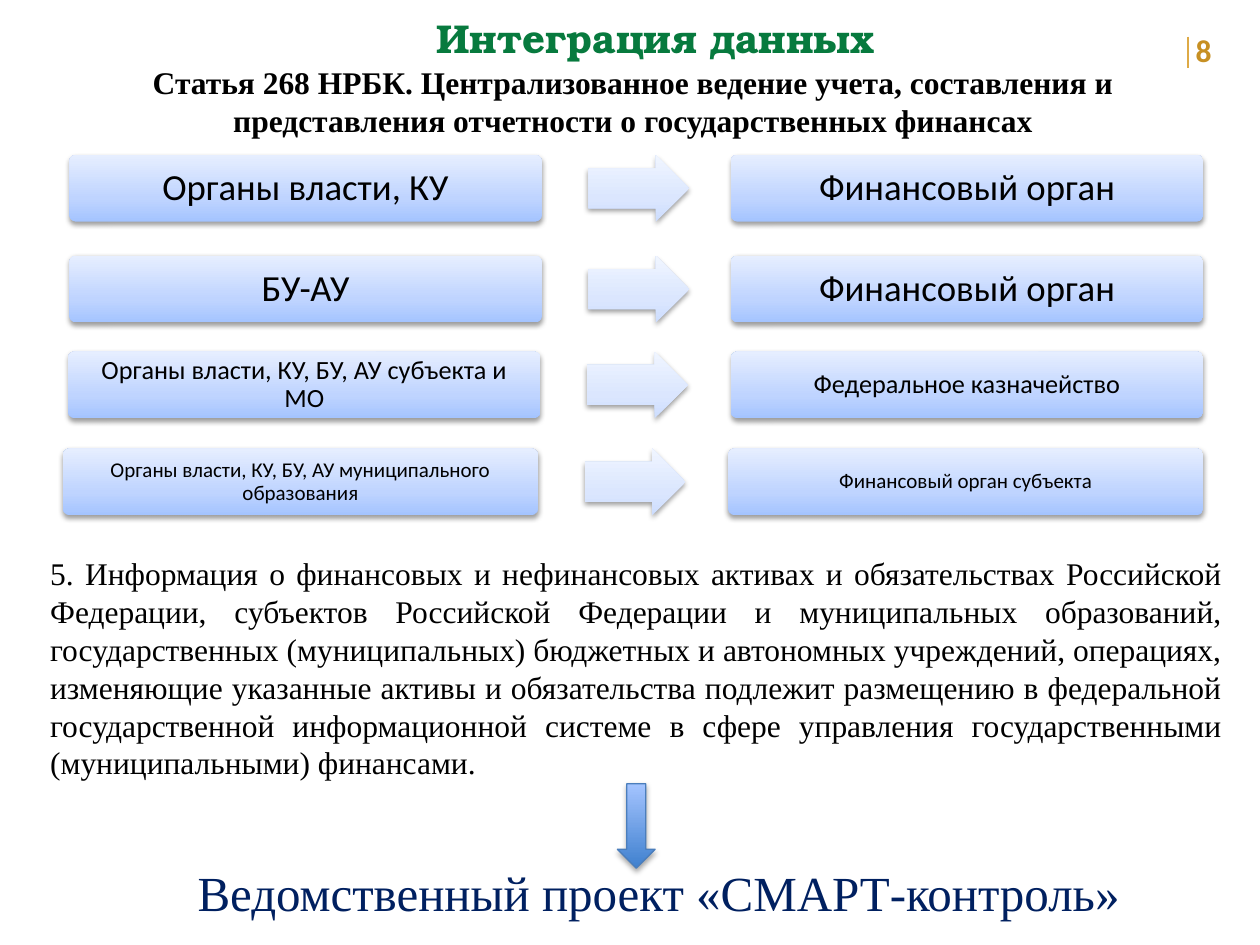
from lxml.etree import SubElement
from pptx import Presentation
from pptx.dml.color import RGBColor
from pptx.enum.shapes import MSO_CONNECTOR, MSO_SHAPE
from pptx.enum.text import MSO_ANCHOR, PP_ALIGN
from pptx.oxml.ns import qn
from pptx.util import Inches, Pt

COLORS = {
    "title": "077A3E", "number": "C79023", "number_line": "DEAA46",
    "text": "000000", "project": "002060", "arrow_line": "4B7EBC",
    "shadow": "000000",
}
GRADIENTS = {
    "box": [(0, "A4C4FF"), (35, "BFD4FF"), (100, "E6EEFF")],
    "flow": [(0, "CDDDFE"), (35, "DBE6FE"), (100, "F0F5FF")],
    "down": [(0, "3F80CE"), (100, "A4C4FF")],
}
SERIF = "Times New Roman"
SANS = "Calibri"

TEXTS = [
    ("Интеграция данных", (2.66, 0.06, 5.09, 0.49),
     "TeX Gyre Bonum", 23, "title", True, PP_ALIGN.CENTER),
    ("8", (9.39, 0.2, 0.61, 0.4), SANS, 18, "number", True, PP_ALIGN.LEFT),
    ("Статья 268 НРБК. Централизованное ведение учета, составления и "
     "представления отчетности о государственных финансах",
     (0.38, 0.45, 9.29, 0.71), SERIF, 18, "text", True, PP_ALIGN.CENTER),
    ("5. Информация о финансовых и нефинансовых активах и обязательствах "
     "Российской Федерации, субъектов Российской Федерации и муниципальных "
     "образований, государственных (муниципальных) бюджетных и автономных "
     "учреждений, операциях, изменяющие указанные активы и обязательства "
     "подлежит размещению в федеральной государственной информационной системе "
     "в сфере управления государственными (муниципальными) финансами.",
     (0.3, 4.35, 9.5, 1.92), SERIF, 18, "text", False, PP_ALIGN.JUSTIFY),
    ("Ведомственный проект «СМАРТ-контроль»", (1.47, 6.8, 7.69, 0.57),
     SERIF, 28, "project", False, PP_ALIGN.JUSTIFY),
]

FLOWS = [
    ("Органы власти, КУ", "Финансовый орган", 0.55, 1.23, 3.75, 21, 0.1),
    ("БУ-АУ", "Финансовый орган", 0.55, 2.03, 3.75, 21, 0.1),
    ("Органы власти, КУ, БУ, АУ субъекта и МО", "Федеральное казначейство",
     0.54, 2.79, 3.75, 15, 0.07),
    ("Органы власти, КУ, БУ, АУ муниципального образования",
     "Финансовый орган субъекта", 0.5, 3.56, 3.77, 12, 0.06),
]
FLOW_RIGHT = 9.55
FLOW_HEIGHT = 0.53
ARROW_GAP = 0.37
ARROW_WIDTH = 0.8


def color(name):
    return RGBColor.from_string(COLORS[name])


def write(shape, text, font, size, ink, bold, align):
    frame = shape.text_frame
    frame.word_wrap = True
    frame.text = text
    paragraph = frame.paragraphs[0]
    paragraph.alignment = align
    span = paragraph.runs[0].font
    span.name, span.size, span.bold = font, Pt(size), bold
    span.color.rgb = color(ink)


def add_gradient_shape(page, kind, area, gradient, opacity=38, drop=1.6):
    shape = page.shapes.add_shape(kind, *map(Inches, area))
    shape.fill.gradient()
    shape.fill.gradient_angle = 90
    stops = shape.fill._fill._gradFill.find(qn("a:gsLst"))
    for stop in list(stops):
        stops.remove(stop)
    for position, tone in GRADIENTS[gradient]:
        stop = SubElement(stops, qn("a:gs"), pos=str(position * 1000))
        SubElement(stop, qn("a:srgbClr"), val=tone)
    shape.line.fill.background()
    shape.shadow.inherit = False
    effects = shape._element.spPr.find(qn("a:effectLst"))
    shadow = SubElement(effects, qn("a:outerShdw"), blurRad=str(Pt(3.1)),
                        dist=str(Pt(drop)), dir="5400000", rotWithShape="0")
    tone = SubElement(shadow, qn("a:srgbClr"), val=COLORS["shadow"])
    SubElement(tone, qn("a:alpha"), val=str(opacity * 1000))
    return shape


def add_flow(page, source, target, left, top, width, size, inset):
    right = FLOW_RIGHT - width
    for text, x in ((source, left), (target, right)):
        box = add_gradient_shape(page, MSO_SHAPE.ROUNDED_RECTANGLE,
                                 (x, top, width, FLOW_HEIGHT), "box")
        box.adjustments[0] = 0.1
        write(box, text, SANS, size, "text", False, PP_ALIGN.CENTER)
        frame = box.text_frame
        frame.vertical_anchor = MSO_ANCHOR.MIDDLE
        frame.margin_left = frame.margin_right = Inches(inset)
        frame.margin_top = frame.margin_bottom = Inches(inset)
        frame.paragraphs[0].line_spacing = 0.9
    arrow = add_gradient_shape(
        page, MSO_SHAPE.RIGHT_ARROW,
        (left + width + ARROW_GAP, top, ARROW_WIDTH, FLOW_HEIGHT), "flow")
    arrow.adjustments[0] = 0.6
    arrow.adjustments[1] = 0.5


def main():
    deck = Presentation()
    deck.slide_width, deck.slide_height = Inches(10), Inches(7.5)
    page = deck.slides.add_slide(deck.slide_layouts[6])

    for text, area, *style in TEXTS:
        write(page.shapes.add_textbox(*map(Inches, area)), text, *style)

    number_line = page.shapes.add_connector(
        MSO_CONNECTOR.STRAIGHT, *map(Inches, (9.43, 0.29, 9.43, 0.54)))
    number_line.line.color.rgb = color("number_line")
    number_line.line.width = Pt(1)
    SubElement(number_line._element.spPr, qn("a:effectLst"))

    for flow in FLOWS:
        add_flow(page, *flow)

    down_arrow = add_gradient_shape(page, MSO_SHAPE.DOWN_ARROW,
                                    (4.9, 6.22, 0.3, 0.67), "down", 35, 1.8)
    down_arrow.line.color.rgb = color("arrow_line")
    down_arrow.line.width = Pt(0.75)

    deck.save("out.pptx")


if __name__ == "__main__":
    main()
